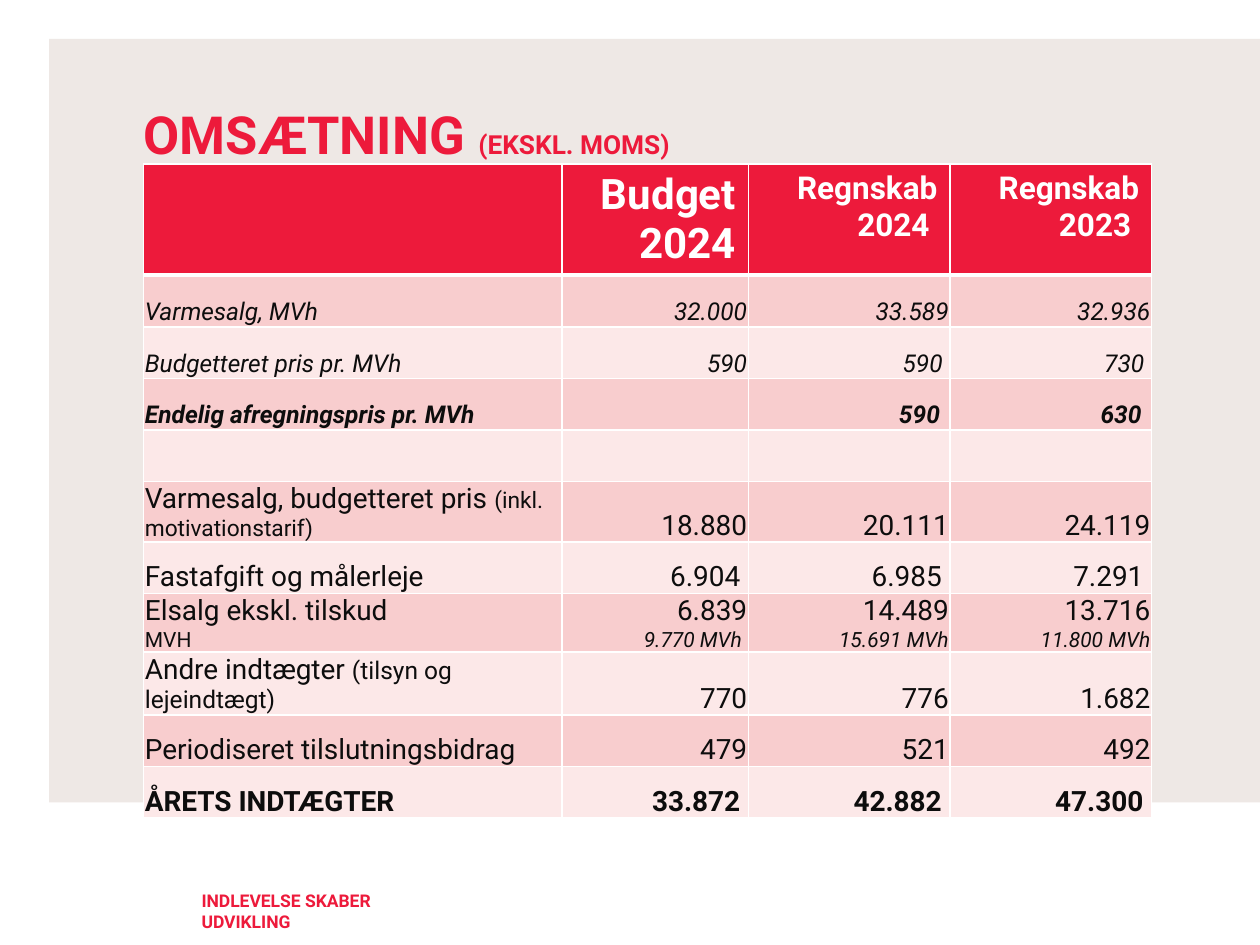
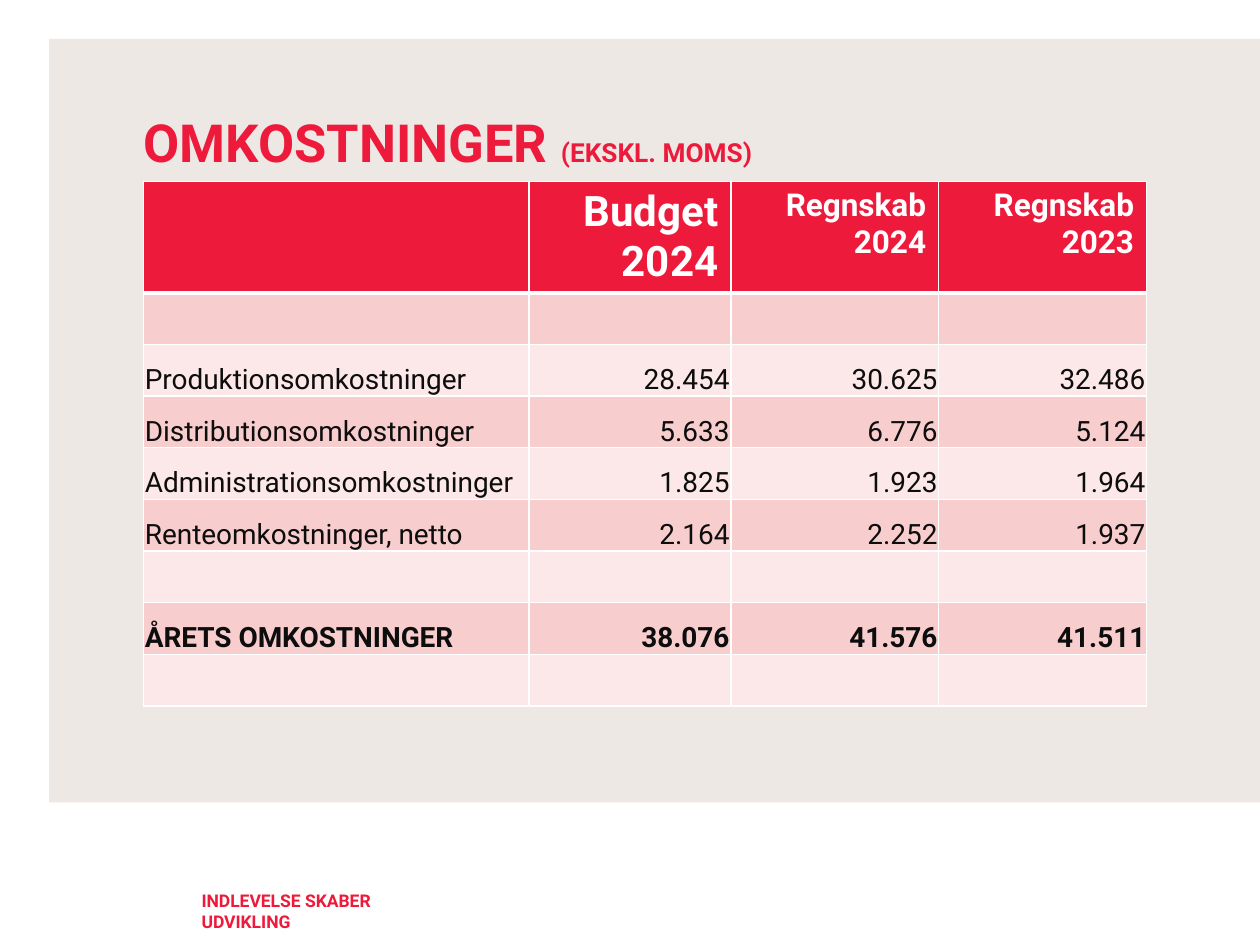
from dataclasses import dataclass
from lxml.etree import SubElement
from pptx import Presentation
from pptx.dml.color import RGBColor
from pptx.enum.shapes import MSO_SHAPE
from pptx.enum.text import MSO_ANCHOR, PP_ALIGN
from pptx.oxml.ns import qn
from pptx.util import Inches, Pt

RED = RGBColor(0xED, 0x1A, 0x3B)
SAND = RGBColor(0xEE, 0xE8, 0xE5)
ROSE = RGBColor(0xF8, 0xCD, 0xCE)
BLUSH = RGBColor(0xFC, 0xE8, 0xE8)
WHITE = RGBColor(0xFF, 0xFF, 0xFF)
INK = RGBColor(0x0D, 0x0D, 0x0D)
FACE = "Roboto"
LEFT = 1.14
ROW = 0.41
BLANK = [""] * 4


@dataclass
class Row:
    cells: list
    size: float = 16
    bold: bool = False
    slant: bool = False
    note: float = 12
    pad: float = 0.01


SALES = [
    Row(["Varmesalg, MVh", "32.000", "33.589", "32.936"], 14, slant=True),
    Row(["Budgetteret pris pr. MVh", "590", "590 ", "730 "], 14, slant=True),
    Row(["Endelig afregningspris pr. MVh", "", "590", "630"], 14, True, True, pad=0.08),
    Row(BLANK),
    Row(["Varmesalg, budgetteret pris |(inkl. motivationstarif)",
         "18.880", "20.111", "24.119"], note=13),
    Row(["Fastafgift og målerleje", "6.904 ", "6.985 ", "7.291 "]),
    Row(["Elsalg ekskl. tilskud\nMVH", "6.839\n9.770 MVh ",
         "14.489\n15.691 MVh", "13.716\n11.800 MVh"]),
    Row(["Andre indtægter |(tilsyn og lejeindtægt)", "770", "776", "1.682"], note=14),
    Row(["Periodiseret tilslutningsbidrag", "479", "521", "492"]),
    Row(["ÅRETS INDTÆGTER", "33.872 ", "42.882 ", "47.300 "], bold=True),
]
COSTS = [
    Row(BLANK),
    Row(["Produktionsomkostninger", "28.454", "30.625", "32.486"]),
    Row(["Distributionsomkostninger", "5.633", "6.776", "5.124"]),
    Row(["Administrationsomkostninger", "1.825", "1.923", "1.964"]),
    Row(["Renteomkostninger, netto", "2.164", "2.252", "1.937"]),
    Row(BLANK),
    Row(["ÅRETS OMKOSTNINGER", "38.076", "41.576", "41.511"], bold=True),
    Row(BLANK),
]


def set_font(font, size, color, bold=False, slant=False):
    font.name = FACE
    font.size = Pt(size)
    font.color.rgb = color
    font.bold = bold
    font.italic = slant


def set_pad(box, left=0, top=0, right=0, base=0):
    box.margin_left, box.margin_top = Inches(left), Inches(top)
    box.margin_right, box.margin_bottom = Inches(right), Inches(base)


def add_band(slide):
    band = slide.shapes.add_shape(MSO_SHAPE.RECTANGLE, Inches(0.39), Inches(0.31),
                                  Inches(9.61), Inches(6.06))
    band.shadow.inherit = False
    band.fill.solid()
    band.fill.fore_color.rgb = SAND
    band.line.fill.background()
    return band


def add_motto(slide):
    box = slide.shapes.add_textbox(Inches(1.6), Inches(7.06), Inches(2), Inches(0.34))
    frame = box.text_frame
    frame.word_wrap = True
    set_pad(frame)
    para = frame.paragraphs[0]
    para.text = "INDLEVELSE SKABER UDVIKLING"
    set_font(para.font, 10, RED, True)
    return box


def share(layout, shapes):
    for index, shape in enumerate(shapes):
        shape.element.nvSpPr.cNvPr.set("id", str(100 + index))
        layout.shapes.element.append(shape.element)


def set_title(slide, text, top):
    title = slide.shapes.title
    title.left, title.top = Inches(LEFT), Inches(top)
    title.width, title.height = Inches(8.51), Inches(1.03)
    frame = title.text_frame
    frame.vertical_anchor = MSO_ANCHOR.TOP
    set_pad(frame, top=0.03)
    para = frame.paragraphs[0]
    para.alignment = PP_ALIGN.LEFT
    for part, size in ((text + " ", 30), ("(EKSKL. MOMS)", 15)):
        run = para.add_run()
        run.text = part
        set_font(run.font, size, RED, True)


def set_edges(cell, top=1, base=1):
    props = cell._tc.get_or_add_tcPr()
    for side, width in (("L", 1), ("R", 1), ("T", top), ("B", base)):
        line = SubElement(props, qn("a:ln" + side), w=str(Pt(width)))
        fill = SubElement(line, qn("a:solidFill"))
        SubElement(fill, qn("a:srgbClr"), val=str(WHITE))


def paint(cell, color):
    cell.fill.solid()
    cell.fill.fore_color.rgb = color


def fill_head(cell, text, size):
    set_edges(cell, base=3)
    paint(cell, RED)
    para = cell.text_frame.paragraphs[0]
    para.text = text
    para.alignment = PP_ALIGN.RIGHT
    set_font(para.font, size, WHITE, True)


def fill_cell(cell, text, row, label):
    pad = 0.01 if label else row.pad
    set_pad(cell, pad, 0.01, pad)
    cell.vertical_anchor = MSO_ANCHOR.BOTTOM
    frame = cell.text_frame
    for index, line in enumerate(text.split("\n")):
        para = frame.add_paragraph() if index else frame.paragraphs[0]
        para.alignment = PP_ALIGN.LEFT if label else PP_ALIGN.RIGHT
        size = row.note if index else row.size
        slant = row.slant or (index > 0 and not label)
        set_font(para.font, size, INK, row.bold, slant)
        main, _, note = line.partition("|")
        para.add_run().text = main
        if note:
            run = para.add_run()
            run.text = note
            run.font.size = Pt(row.note)


def add_grid(slide, top, widths, heads, rows, first):
    count = len(rows) + 1
    frame = slide.shapes.add_table(count, len(widths), Inches(LEFT), Inches(top),
                                   Inches(sum(widths)), Inches(first + ROW * len(rows)))
    table = frame.table
    table.horz_banding = False
    for col, width in zip(table.columns, widths):
        col.width = Inches(width)
    for index, line in enumerate(table.rows):
        line.height = Inches(ROW if index else first)
    for col, (text, size) in enumerate(zip(heads, (18, 24, 18, 18))):
        fill_head(table.cell(0, col), text, size)
    for index, row in enumerate(rows, 1):
        for col, text in enumerate(row.cells):
            cell = table.cell(index, col)
            set_edges(cell, top=3 if index == 1 else 1)
            paint(cell, ROSE if index % 2 else BLUSH)
            fill_cell(cell, text, row, col == 0)


def main():
    deck = Presentation()
    deck.slide_width, deck.slide_height = Inches(10), Inches(7.5)
    layout = deck.slide_layouts[5]

    sales = deck.slides.add_slide(layout)
    share(layout, [add_band(sales), add_motto(sales)])
    set_title(sales, "OMSÆTNING", 0.78)
    add_grid(sales, 1.3, [3.32, 1.48, 1.6, 1.6],
             ["", "Budget 2024", "Regnskab 2024 ", "Regnskab 2023 "], SALES, 0.68)

    costs = deck.slides.add_slide(layout)
    set_title(costs, "OMKOSTNINGER", 0.84)
    add_grid(costs, 1.44, [3.06, 1.6, 1.65, 1.65],
             ["", "Budget 2024", "Regnskab 2024", "Regnskab 2023"], COSTS, ROW)

    deck.save("out.pptx")


if __name__ == "__main__":
    main()
